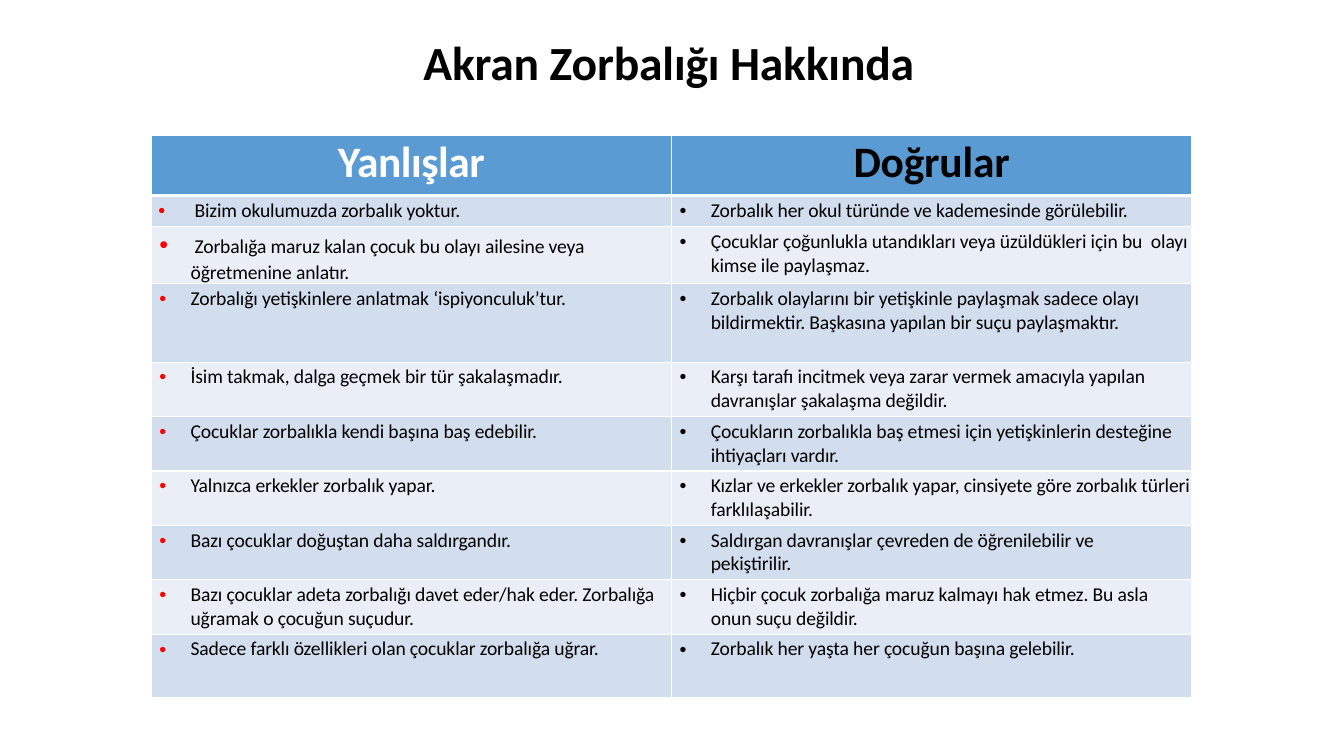
from dataclasses import dataclass

from lxml.etree import SubElement
from pptx import Presentation
from pptx.dml.color import RGBColor
from pptx.enum.text import MSO_ANCHOR as Anchor, MSO_AUTO_SIZE as AutoSize, PP_ALIGN as Align
from pptx.oxml.ns import qn
from pptx.slide import Slide
from pptx.table import _Cell as Cell
from pptx.text.text import TextFrame, _Paragraph as Paragraph
from pptx.util import Inches, Pt


@dataclass(frozen=True)
class Theme:
    font: str = "Calibri"
    title_size: float = 34
    header_size: float = 31
    body_size: float = 14
    tab_size: float = 18
    black: str = "000000"
    white: str = "FFFFFF"
    header: str = "5B9BD4"
    odd: str = "D2DEEE"
    even: str = "EAEEF7"
    wrong: str = "FF0000"


@dataclass(frozen=True)
class Belief:
    wrong: str
    right: str
    height: float = 0.54
    wrong_margin: float = 0.39
    wrong_indent: float = -0.31


THEME = Theme()
BELIEFS = [
    Belief("Bizim okulumuzda zorbalık yoktur.",
           "Zorbalık her okul türünde ve kademesinde görülebilir.", 0.31, 0.43, -0.36),
    Belief("\tZorbalığa maruz kalan çocuk bu olayı ailesine veya  öğretmenine anlatır.",
           "Çocuklar çoğunlukla utandıkları veya üzüldükleri için bu  olayı kimse ile paylaşmaz."),
    Belief("Zorbalığı yetişkinlere anlatmak ‘ispiyonculuk’tur.",
           "Zorbalık olaylarını bir yetişkinle paylaşmak sadece olayı  bildirmektir. "
           "Başkasına yapılan bir suçu paylaşmaktır.", 0.78),
    Belief("İsim takmak, dalga geçmek bir tür şakalaşmadır.",
           "Karşı tarafı incitmek veya zarar vermek amacıyla yapılan davranışlar şakalaşma değildir."),
    Belief("Çocuklar zorbalıkla kendi başına baş edebilir.",
           "Çocukların zorbalıkla baş etmesi için yetişkinlerin desteğine\nihtiyaçları vardır."),
    Belief("Yalnızca erkekler zorbalık yapar.",
           "Kızlar ve erkekler zorbalık yapar, cinsiyete göre zorbalık türleri farklılaşabilir."),
    Belief("Bazı çocuklar doğuştan daha saldırgandır.",
           "Saldırgan davranışlar çevreden de öğrenilebilir ve\npekiştirilir."),
    Belief("Bazı çocuklar adeta zorbalığı davet eder/hak eder. Zorbalığa uğramak o çocuğun suçudur.",
           "Hiçbir çocuk zorbalığa maruz kalmayı hak etmez. Bu asla  onun suçu değildir."),
    Belief("Sadece farklı özellikleri olan çocuklar zorbalığa uğrar.",
           "Zorbalık her yaşta her çocuğun başına gelebilir.", 0.63),
]


def add_span(para: Paragraph, text: str, size: float, color: str = THEME.black,
             bold: bool = False, spacing: int = -10) -> None:
    span = para.add_run()
    span.text = text
    for name, value in {"name": THEME.font, "size": Pt(size), "bold": bold}.items():
        setattr(span.font, name, value)
    span.font.color.rgb = RGBColor.from_string(color)
    span.font._element.set("spc", str(spacing))


def indent(para: Paragraph, margin: float, first: float) -> None:
    properties = para._p.get_or_add_pPr()
    properties.set("marL", str(Inches(margin)))
    properties.set("indent", str(Inches(first)))


def add_bullet(para: Paragraph, color: str, tab: float) -> None:
    properties = para._p.get_or_add_pPr()
    SubElement(SubElement(properties, qn("a:buClr")), qn("a:srgbClr"), val=color)
    SubElement(properties, qn("a:buFont"), typeface="Arial")
    SubElement(properties, qn("a:buChar"), char="•")
    tabs = SubElement(properties, qn("a:tabLst"))
    SubElement(tabs, qn("a:tab"), pos=str(Inches(tab)), algn="l")


def write_list(frame: TextFrame, text: str, bullet: str, margin: float, first: float) -> None:
    for number, line in enumerate(text.split("\n")):
        para = frame.add_paragraph() if number else frame.paragraphs[0]
        indent(para, margin, 0 if number else first)
        if not number:
            add_bullet(para, bullet, 0.43 if line.startswith("\t") else margin)
        if line.startswith("\t"):
            add_span(para, "\t", THEME.tab_size, spacing=0)
        add_span(para, line.lstrip("\t"), THEME.body_size)


def format_cell(cell: Cell, fill: str, top_margin: float, top: float, bottom: float) -> None:
    margins = {"margin_left": 0, "margin_top": top_margin, "margin_right": 0, "margin_bottom": 0}
    for name, value in margins.items():
        setattr(cell, name, Inches(value))
    properties = cell._tc.get_or_add_tcPr()
    for side, width in {"L": 1, "R": 1, "T": top, "B": bottom}.items():
        line = SubElement(properties, qn(f"a:ln{side}"), w=str(Pt(width)))
        SubElement(SubElement(line, qn("a:solidFill")), qn("a:srgbClr"), val=THEME.white)
    cell.fill.solid()
    cell.fill.fore_color.rgb = RGBColor.from_string(fill)


def add_title(page: Slide) -> None:
    title = page.shapes.title
    place = {"left": 4.19, "top": 0.32, "width": 4.94, "height": 0.59}
    for name, value in place.items():
        setattr(title, name, Inches(value))
    frame = title.text_frame
    layout = {"margin_left": 0, "margin_top": Inches(0.01), "margin_right": 0, "margin_bottom": 0,
              "word_wrap": True, "vertical_anchor": Anchor.TOP, "auto_size": AutoSize.SHAPE_TO_FIT_TEXT}
    for name, value in layout.items():
        setattr(frame, name, value)
    para = frame.paragraphs[0]
    para.alignment = Align.LEFT
    indent(para, 0.01, 0)
    add_span(para, "Akran Zorbalığı Hakkında", THEME.title_size, bold=True)


def add_beliefs(page: Slide) -> None:
    table = page.shapes.add_table(len(BELIEFS) + 1, 2, Inches(1.5), Inches(1.34),
                                  Inches(10.32), Inches(5.6)).table
    table.rows[0].height = Inches(0.6)
    headings = [("Yanlışlar", THEME.white, -30), ("Doğrular", THEME.black, -10)]
    for column, (heading, color, spacing) in enumerate(headings):
        cell = table.cell(0, column)
        format_cell(cell, THEME.header, 0.01, 1, 3)
        para = cell.text_frame.paragraphs[0]
        para.alignment = Align.CENTER
        add_span(para, heading, THEME.header_size, color, True, spacing)
    for row, belief in enumerate(BELIEFS, start=1):
        table.rows[row].height = Inches(belief.height)
        sides = [(belief.wrong, THEME.wrong, belief.wrong_margin, belief.wrong_indent),
                 (belief.right, THEME.black, 0.39, -0.31)]
        for column, side in enumerate(sides):
            cell = table.cell(row, column)
            format_cell(cell, THEME.odd if row % 2 else THEME.even, 0.03, 3 if row == 1 else 1, 1)
            write_list(cell.text_frame, *side)


def main() -> None:
    deck = Presentation()
    deck.slide_width, deck.slide_height = Inches(13.33), Inches(7.5)
    page = deck.slides.add_slide(deck.slide_layouts.get_by_name("Title Only"))
    add_beliefs(page)
    add_title(page)
    deck.save("out.pptx")


if __name__ == "__main__":
    main()
